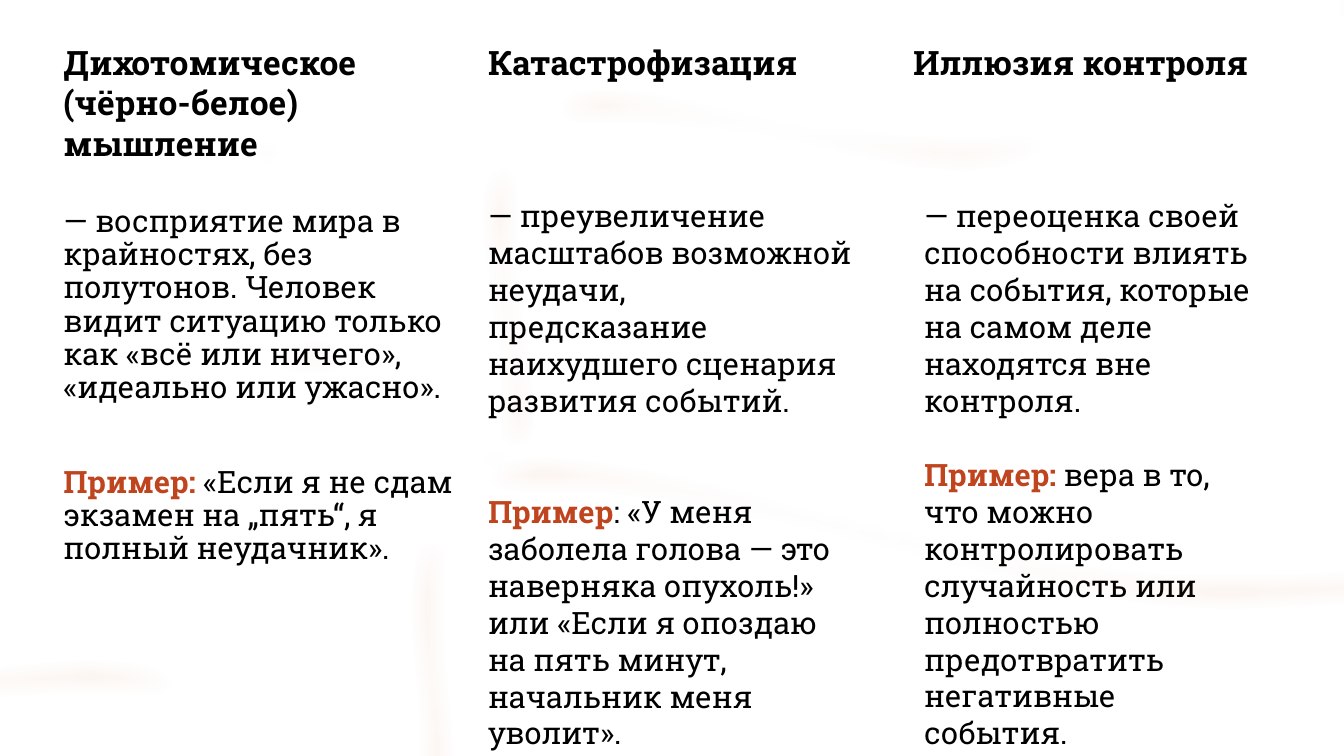
from lxml.etree import SubElement
from pptx import Presentation
from pptx.dml.color import RGBColor
from pptx.oxml.ns import qn
from pptx.util import Cm, Pt

BLACK = RGBColor(0x00, 0x00, 0x00)
RUST = RGBColor(0xBF, 0x45, 0x1F)
ORANGE = RGBColor(0xD3, 0x73, 0x35)
FONT = "Roboto Slab"
CURVE_UNIT = Cm(2.54)
CURVE_HEIGHT = 14.4

TITLES = [
    (1.35, 11.18, 3.33, "Дихотомическое (чёрно-белое) мышление"),
    (12.05, 16.94, 1.27, "Катастрофизация"),
    (22.76, 16.94, 1.27, "Иллюзия контроля"),
]

COLUMNS = [
    (1.35, 5.06, 10.39, 15.8, 0.9, 43.8,
     "— восприятие мира в крайностях, без полутонов. Человек видит ситуацию "
     "только как «всё или ничего», «идеально или ужасно».",
     "Пример: ", "«Если я не сдам экзамен на „пять“, я полный неудачник»."),
    (12.05, 4.83, 9.68, 13.41, 1.0, 53,
     "— преувеличение масштабов возможной неудачи, предсказание наихудшего "
     "сценария развития событий.",
     "Пример", ": «У меня заболела голова — это наверняка опухоль!» или "
     "«Если я опоздаю на пять минут, начальник меня уволит»."),
    (23.04, 4.83, 8.97, 13.41, 1.0, 26.6,
     "— переоценка своей способности влиять на события, которые на самом деле "
     "находятся вне контроля.",
     "Пример: ", "вера в то, что можно контролировать случайность или "
     "полностью предотвратить негативные события."),
]

CURVE_POINTS = [
    (-0.03, 4.91), (1.13, 4.32), (2.29, 3.72), (3.14, 3.68),
    (3.99, 3.65), (4.7, 5.1), (5.06, 4.7), (5.42, 4.29), (4.48, 1.77), (5.29, 1.25),
    (6.1, 0.74), (8.56, 1.77), (9.91, 1.59), (11.26, 1.42), (13.04, 0.59), (13.41, 0.22),
    (13.77, -0.16), (12.18, -0.5), (12.11, -0.63), (12.05, -0.76), (12.62, -0.62),
    (13, -0.56), (13.38, -0.5), (13.89, -0.39), (14.39, -0.28),
]

MIDDLE_CURVE = (-0.08, -1.93, 36.63, 0)
UPPER_CURVE = (-10.87, -5.51, 55.65, 25)
LOWER_CURVE = (-8.46, 7.93, 55.65, 6.4)


def bend_segments(shape):
    segments = list(shape.element.iter(qn("a:lnTo")))
    for index in range(0, len(segments), 3):
        first, *others = segments[index:index + 3]
        first.tag = qn("a:cubicBezTo")
        for segment in others:
            first.append(segment[0])
            segment.getparent().remove(segment)


def add_soft_curve(slide, left, top, width, rotation):
    builder = slide.shapes.build_freeform(*CURVE_POINTS[0], scale=CURVE_UNIT)
    points = [(x * CURVE_UNIT, y * CURVE_UNIT) for x, y in CURVE_POINTS]
    builder = slide.shapes.build_freeform(*points[0])
    builder.add_line_segments(points[1:], close=False)
    shape = builder.convert_to_shape()
    bend_segments(shape)
    shape.left, shape.top = Cm(left), Cm(top)
    shape.width, shape.height = Cm(width), Cm(CURVE_HEIGHT)
    shape.rotation = rotation
    shape.shadow.inherit = False
    shape.fill.background()
    shape.line.color.rgb = ORANGE
    shape.line.width = Pt(28)
    properties = shape.element.spPr
    color = properties.find(qn("a:ln")).find(".//" + qn("a:srgbClr"))
    SubElement(color, qn("a:alpha"), val="19000")
    effects = properties.find(qn("a:effectLst"))
    SubElement(effects, qn("a:softEdge"), rad=str(Pt(12.5)))


def add_text_box(slide, left, top, width, height):
    text_frame = slide.shapes.add_textbox(Cm(left), Cm(top), Cm(width), Cm(height)).text_frame
    text_frame.word_wrap = True
    return text_frame


def style_paragraph(paragraph, size):
    paragraph.font.name = FONT
    paragraph.font.size = Pt(size)


def add_title(slide, left, width, height, text):
    paragraph = add_text_box(slide, left, 0.93, width, height).paragraphs[0]
    paragraph.text = text
    style_paragraph(paragraph, 24)
    paragraph.font.bold = True
    paragraph.font.color.rgb = BLACK


def add_column(slide, left, top, width, height, line_spacing, gap, definition, label, example):
    text_frame = add_text_box(slide, left, top, width, height)
    definition_paragraph = text_frame.paragraphs[0]
    definition_paragraph.text = definition
    definition_paragraph.font.color.rgb = BLACK
    example_paragraph = text_frame.add_paragraph()
    example_paragraph.space_before = Pt(gap)
    for text, color, bold in ((label, RUST, True), (example, BLACK, False)):
        run = example_paragraph.add_run()
        run.text = text
        run.font.color.rgb = color
        run.font.bold = bold
    for paragraph in text_frame.paragraphs:
        paragraph.line_spacing = line_spacing
        style_paragraph(paragraph, 22)


def main():
    presentation = Presentation()
    presentation.slide_width = Cm(33.87)
    presentation.slide_height = Cm(19.05)
    slide = presentation.slides.add_slide(presentation.slide_layouts[6])
    add_soft_curve(slide, *MIDDLE_CURVE)
    for column in COLUMNS:
        add_column(slide, *column)
    for title in TITLES:
        add_title(slide, *title)
    add_soft_curve(slide, *UPPER_CURVE)
    add_soft_curve(slide, *LOWER_CURVE)
    presentation.save("out.pptx")


if __name__ == "__main__":
    main()
